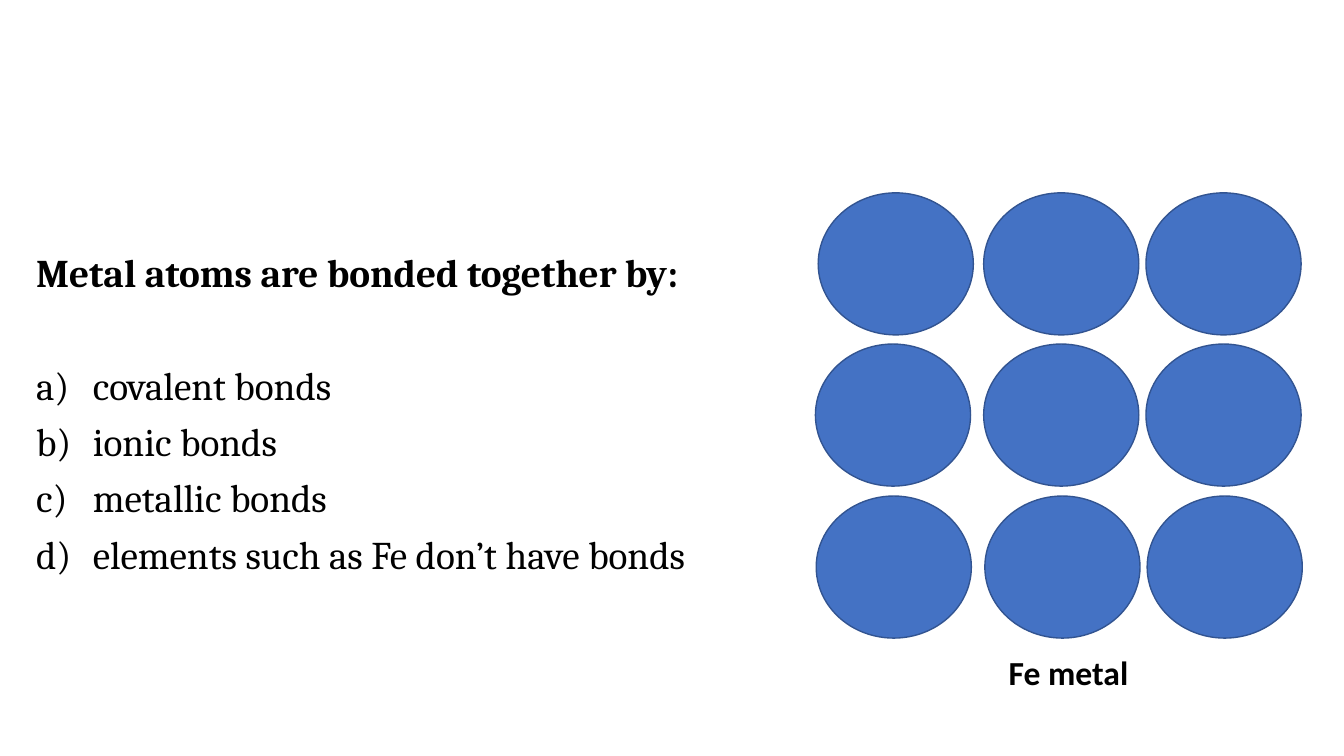
from lxml import etree
from pptx import Presentation
from pptx.dml.color import RGBColor
from pptx.enum.shapes import MSO_SHAPE as Shape
from pptx.oxml.ns import qn
from pptx.util import Cm, Pt

QUESTION = "Metal atoms are bonded together by:"
ANSWERS = [
    "covalent bonds",
    "ionic bonds",
    "metallic bonds",
    "elements such as Fe don’t have bonds",
]
LABEL = "Fe metal"

# Top of each row of atoms, with the left edge of each atom in it (cm)
ROWS = [
    (4.86, (20.62, 24.79, 28.88)),
    (8.67, (20.55, 24.79, 28.88)),
    (12.5, (20.57, 24.82, 28.91)),
]
ATOM = (3.91, 3.58)
QUIZ_BOX = (0.66, 3.25, 18.01, 12.09)
LABEL_BOX = (25.17, 16.31, 4.65, 1.27)
INDENT = Cm(1.43)


def color(code):
    return RGBColor.from_string(code)


def style(para, font, size, bold):
    for run in para.runs:
        run.font.name = font
        run.font.size = Pt(size)
        run.font.bold = bold
        run.font.color.rgb = color("000000")


def letter(para):
    """Number a paragraph a), b), c) with a hanging indent."""
    props = para._p.get_or_add_pPr()
    props.set("marL", str(INDENT))
    props.set("indent", str(-INDENT))
    mark = etree.SubElement(props, qn("a:buAutoNum"))
    mark.set("type", "alphaLcParenR")


def add_box(slide, box):
    frame = slide.shapes.add_textbox(*map(Cm, box)).text_frame
    frame.word_wrap = True
    return frame


def add_quiz(slide):
    frame = add_box(slide, QUIZ_BOX)
    frame.margin_top = Cm(3.15)
    frame.text = "\n".join([QUESTION, *ANSWERS])
    for i, para in enumerate(frame.paragraphs):
        para.line_spacing = 0.9
        # A wider gap sets the question apart from the answers
        para.space_before = Pt((0, 50)[i] if i < 2 else 10)
        style(para, "Cambria", 28, i == 0)
        if i:
            letter(para)


def add_atom(slide, left, top):
    atom = slide.shapes.add_shape(Shape.OVAL, *map(Cm, (left, top, *ATOM)))
    atom.shadow.inherit = False
    atom.fill.solid()
    atom.fill.fore_color.rgb = color("4472C4")
    atom.line.color.rgb = color("325491")
    atom.line.width = Pt(1)


def main():
    deck = Presentation()
    deck.slide_width, deck.slide_height = Cm(33.87), Cm(19.05)
    slide = deck.slides.add_slide(deck.slide_layouts[6])
    add_quiz(slide)
    for top, lefts in ROWS:
        for left in lefts:
            add_atom(slide, left, top)
    label = add_box(slide, LABEL_BOX)
    label.text = LABEL
    style(label.paragraphs[0], "Calibri", 24, True)
    deck.save("out.pptx")


if __name__ == "__main__":
    main()
